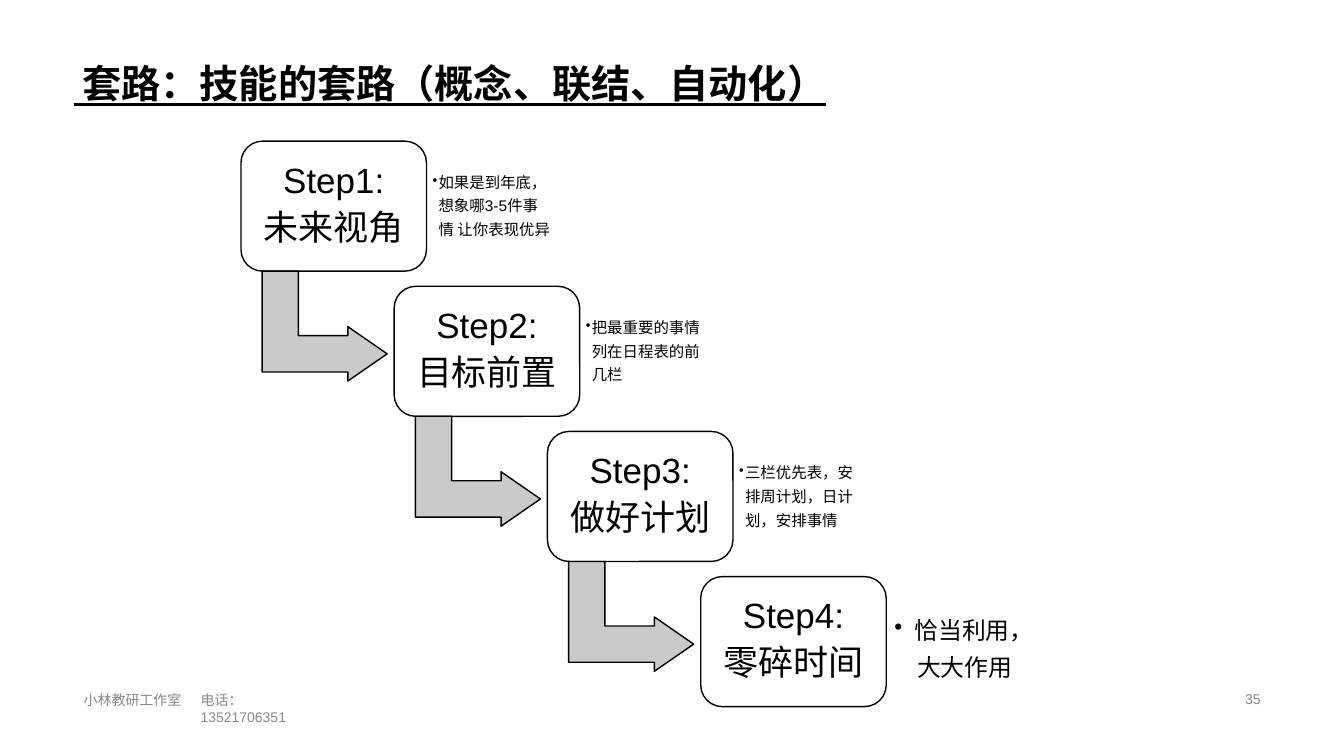
from lxml.etree import SubElement
from pptx import Presentation
from pptx.dml.color import RGBColor
from pptx.enum.shapes import MSO_SHAPE
from pptx.enum.text import MSO_ANCHOR, PP_ALIGN
from pptx.oxml.ns import qn
from pptx.util import Inches, Pt

BLACK = RGBColor(0x00, 0x00, 0x00)
GRAY = RGBColor(0x88, 0x88, 0x88)
ARROW_GRAY = RGBColor(0xCA, 0xCA, 0xCA)
LATIN = "Arial"
CHINESE = "Noto Sans CJK SC"

STEP_WIDTH, STEP_HEIGHT = 1.84, 1.29
FIRST_LEFT, FIRST_TOP = 2.39, 1.4
PITCH_X, PITCH_Y = 1.52, 1.44
ARROW_POINTS = [(0.36, 0), (0.36, 0.64), (0.85, 0.64), (0.85, 0.55), (1.24, 0.82),
                (0.85, 1.09), (0.85, 1), (0, 1), (0, 0)]

# Heading, name and note of each step; a note is a list of (text, font) runs.
STEPS = [
    ("Step1:", "未来视角", [("如果是到年底， 想象哪", CHINESE), ("3-5", LATIN),
                        ("件事情 让你表现优异", CHINESE)]),
    ("Step2:", "目标前置", [("把最重要的事情 列在日程表的前 几栏", CHINESE)]),
    ("Step3:", "做好计划", [("三栏优先表，安 排周计划，日计 划，安排事情", CHINESE)]),
    ("Step4:", "零碎时间", None),
]


def add_run(paragraph, text, size, font_name=CHINESE, color=BLACK):
    run = paragraph.add_run()
    run.text = text
    run.font.size = Pt(size)
    run.font.color.rgb = color
    run.font.name = font_name
    if font_name == CHINESE:
        SubElement(run.font._element, qn("a:ea"), typeface=CHINESE)
    return run


def set_insets(frame, top=0):
    frame.word_wrap = True
    frame.vertical_anchor = MSO_ANCHOR.TOP
    frame.margin_left = frame.margin_right = frame.margin_bottom = 0
    frame.margin_top = Inches(top)


def add_text_box(slide, left, top, width, height, inset_top=0):
    box = slide.shapes.add_textbox(Inches(left), Inches(top), Inches(width), Inches(height))
    set_insets(box.text_frame, inset_top)
    return box.text_frame


def add_bullet(paragraph, indent, hanging, percent=100):
    properties = paragraph._p.get_or_add_pPr()
    properties.set("marL", str(Inches(indent)))
    properties.set("indent", str(-Inches(hanging)))
    SubElement(properties, qn("a:buSzPct"), val=str(percent * 1000))
    SubElement(properties, qn("a:buChar"), char="•")


def outline_black(shape):
    shape.shadow.inherit = False
    shape.line.color.rgb = BLACK
    shape.line.width = Pt(1)


def add_title(slide, left, top, width, height):
    title = slide.shapes.title
    title.left, title.top = Inches(left), Inches(top)
    title.width, title.height = Inches(width), Inches(height)
    set_insets(title.text_frame, 0.01)
    paragraph = title.text_frame.paragraphs[0]
    paragraph.alignment = PP_ALIGN.LEFT
    lead = add_run(paragraph, " ", 28, "Times New Roman")
    heading = add_run(paragraph, "套路：技能的套路（概念、联结、自动化）", 28)
    heading.font.bold = True
    lead.font.underline = heading.font.underline = True


def add_step(slide, left, top, heading, name):
    box = slide.shapes.add_shape(MSO_SHAPE.ROUNDED_RECTANGLE, Inches(left), Inches(top),
                                 Inches(STEP_WIDTH), Inches(STEP_HEIGHT))
    outline_black(box)
    box.fill.background()
    frame = box.text_frame
    set_insets(frame, 0.11)
    first, second = frame.paragraphs[0], frame.add_paragraph()
    first.alignment = second.alignment = PP_ALIGN.CENTER
    second.space_before = Pt(3.6)
    add_run(first, heading, 25, LATIN)
    add_run(second, name, 25)


def add_bent_arrow(slide, left, top):
    points = [(Inches(left + x), Inches(top + y)) for x, y in ARROW_POINTS]
    builder = slide.shapes.build_freeform(*points[0])
    builder.add_line_segments(points[1:], close=True)
    arrow = builder.convert_to_shape()
    outline_black(arrow)
    arrow.fill.solid()
    arrow.fill.fore_color.rgb = ARROW_GRAY


def add_note(slide, left, top, runs):
    frame = add_text_box(slide, left, top, 1.2, 0.74, 0.02)
    paragraph = frame.paragraphs[0]
    add_bullet(paragraph, 0.08, 0.06, 91)
    paragraph.line_spacing = 1.29
    for text, font_name in runs:
        add_run(paragraph, text, 11, font_name)


def add_closing_note(slide, left, top):
    frame = add_text_box(slide, left, top, 1.4, 0.76, 0.18)
    first, second = frame.paragraphs[0], frame.add_paragraph()
    add_bullet(first, 0.2, 0.2)
    add_run(first, "恰当利用，", 17)
    second.alignment = PP_ALIGN.CENTER
    second.space_before = Pt(5.9)
    add_run(second, "大大作用", 17)


def add_staircase(slide, left, top):
    for index, (heading, name, note) in enumerate(STEPS):
        step_left, step_top = left + index * PITCH_X, top + index * PITCH_Y
        add_step(slide, step_left, step_top, heading, name)
        if note:
            add_bent_arrow(slide, step_left + 0.21, step_top + STEP_HEIGHT)
            add_note(slide, step_left + 1.88, step_top + 0.24, note)
        else:
            add_closing_note(slide, step_left + 1.92, step_top + 0.21)


def add_footer(slide, top):
    studio = add_text_box(slide, 0.83, top, 1, 0.21, 0.03)
    add_run(studio.paragraphs[0], "小林教研工作室", 10, CHINESE, GRAY)
    phone = add_text_box(slide, 1.99, top, 1.2, 0.21, 0.03)
    add_run(phone.paragraphs[0], "电话：", 10, CHINESE, GRAY)
    add_run(phone.paragraphs[0], "13521706351", 10, LATIN, GRAY)
    number = add_text_box(slide, 12.35, top + 0.02, 0.21, 0.18)
    add_run(number.paragraphs[0], "35", 10, LATIN, GRAY)


def main():
    presentation = Presentation()
    presentation.slide_width, presentation.slide_height = Inches(13.33), Inches(7.5)
    slide = presentation.slides.add_slide(presentation.slide_layouts[5])
    add_title(slide, 0.73, 0.58, 11.89, 0.49)
    add_staircase(slide, FIRST_LEFT, FIRST_TOP)
    add_footer(slide, 6.83)
    presentation.save("out.pptx")


if __name__ == "__main__":
    main()
